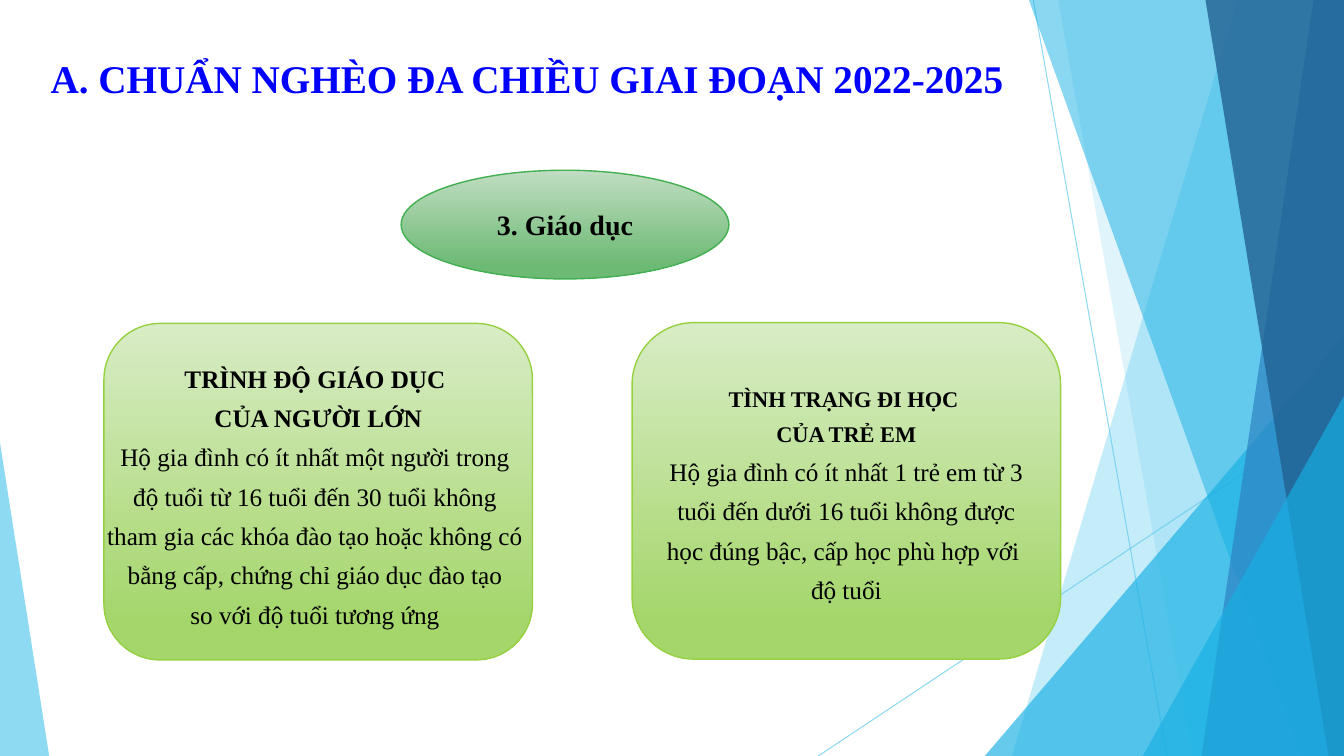
from lxml import etree
from pptx import Presentation
from pptx.dml.color import RGBColor
from pptx.enum.shapes import MSO_CONNECTOR, MSO_SHAPE
from pptx.enum.text import MSO_ANCHOR, PP_ALIGN
from pptx.oxml.ns import qn
from pptx.util import Cm, Pt

STRAIGHT = MSO_CONNECTOR.STRAIGHT
TRIANGLE, OVAL = MSO_SHAPE.ISOSCELES_TRIANGLE, MSO_SHAPE.OVAL
ROUNDED = MSO_SHAPE.ROUNDED_RECTANGLE
MIDDLE, TOP, CENTER = MSO_ANCHOR.MIDDLE, MSO_ANCHOR.TOP, PP_ALIGN.CENTER

W, H = 33.87, 19.05
FONT = "Times New Roman"
COLORS = {
    "sky": "5FCBEF", "cyan": "17B0E4", "blue": "2E83C3", "navy": "226292",
    "title": "0000FF", "text": "000000",
    "lime_top": "D8ECC5", "lime_end": "A5D66C", "lime_line": "96D141",
    "green_top": "C0DDC2", "green_end": "6DBA74", "green_line": "42B051",
}

# Content: (text, size, bold) per paragraph
TITLE = [("A. CHUẨN NGHÈO ĐA CHIỀU GIAI ĐOẠN 2022-2025", 28, True)]
TOPIC = [("3. Giáo dục", 20, True)]
ADULTS = [
    ("TRÌNH ĐỘ GIÁO DỤC ", 18, True),
    ("CỦA NGƯỜI LỚN", 18, True),
    ("Hộ gia đình có ít nhất một người trong ", 18, False),
    ("độ tuổi từ 16 tuổi đến 30 tuổi không ", 18, False),
    ("tham gia các khóa đào tạo hoặc không có ", 18, False),
    ("bằng cấp, chứng chỉ giáo dục đào tạo ", 18, False),
    ("so với độ tuổi tương ứng ", 18, False),
]
CHILDREN = [
    ("TÌNH TRẠNG ĐI HỌC ", 16, True),
    ("CỦA TRẺ EM", 16, True),
    ("Hộ gia đình có ít nhất 1 trẻ em từ 3", 18, False),
    (" tuổi đến dưới 16 tuổi không được ", 18, False),
    ("học đúng bậc, cấp học phù hợp với ", 18, False),
    ("độ tuổi", 18, False),
]
# Cards: left, top, corner, paragraphs
CARD_W, CARD_H = 10.8, 8.48
CARDS = [(2.62, 8.15, 0.167, ADULTS), (15.93, 8.13, 0.184, CHILDREN)]

# Decoration, back to front
RAYS = [(26.04, 0, 29.41, H), (W, 10.24, 20.62, H)]
# band: x at top, x at bottom, out to the right edge
# triangle: left, top, width, apex, down to the bottom edge
PANES = [
    ("band", (31.19, 25.5), "sky", 36),
    ("band", (26.67, 30.05), "sky", 20),
    ("triangle", (24.82, 8.46, 9.05, 1), "cyan", 66),
    ("band", (25.93, 32.79), "cyan", 50),
    ("band", (33.1, 30.28), "blue", 70),
    ("band", (30.38, 33.48), "navy", 80),
    ("triangle", (28.8, 9.98, 5.07, 1), "cyan", 66),
    ("triangle", (0, 11.15, 1.24, 0), "sky", 70),
]


def rgb(name):
    return RGBColor.from_string(COLORS[name])


def set_alpha(s, percent):
    clr = next(s._element.spPr.iter(qn("a:srgbClr")))
    etree.SubElement(clr, qn("a:alpha")).set("val", str(percent * 1000))


def write(s, paragraphs, color, spacing=None, **frame):
    tf = s.text_frame
    for name, value in frame.items():
        setattr(tf, name, value)
    for i, (text, size, bold) in enumerate(paragraphs):
        p = tf.paragraphs[0] if i == 0 else tf.add_paragraph()
        p.alignment, p.line_spacing = CENTER, spacing
        r = p.add_run()
        r.text = text
        for name, value in {"name": FONT, "size": Pt(size), "bold": bold}.items():
            setattr(r.font, name, value)
        r.font.color.rgb = rgb(color)


def add_gradient_shape(kind, box, hue):
    s = shapes.add_shape(kind, *map(Cm, box))
    s.shadow.inherit = False
    s.fill.gradient()
    s.fill.gradient_angle = 270
    for stop, pos, part in zip(s.fill.gradient_stops, (0, 0.88), ("top", "end")):
        stop.position = pos
        stop.color.rgb = rgb(f"{hue}_{part}")
    s.line.color.rgb = rgb(f"{hue}_line")
    s.line.width = Pt(1)
    return s


prs = Presentation()
prs.slide_width, prs.slide_height = Cm(W), Cm(H)
shapes = prs.slides.add_slide(prs.slide_layouts[6]).shapes

# Thin rays
for ray in RAYS:
    s = shapes.add_connector(STRAIGHT, *map(Cm, ray))
    s.line.color.rgb = rgb("sky")
    s.line.width = Pt(0.75)
    set_alpha(s, 70)
    etree.SubElement(s._element.spPr, qn("a:effectLst"))

# Translucent panes
for kind, geometry, color, alpha in PANES:
    if kind == "band":
        x_top, x_bottom = geometry
        corners = [(x_top, 0), (W, 0), (W, H), (x_bottom, H)]
        points = [(Cm(x), Cm(y)) for x, y in corners]
        builder = shapes.build_freeform(*points[0])
        builder.add_line_segments(points[1:])
        s = builder.convert_to_shape()
    else:
        left, top, width, apex = geometry
        s = shapes.add_shape(TRIANGLE, *map(Cm, (left, top, width, H - top)))
        s.adjustments[0] = apex
    s.shadow.inherit = False
    s.fill.solid()
    s.fill.fore_color.rgb = rgb(color)
    set_alpha(s, alpha)
    s.line.fill.background()

# Cards
for left, top, corner, paragraphs in CARDS:
    s = add_gradient_shape(ROUNDED, (left, top, CARD_W, CARD_H), "lime")
    s.adjustments[0] = corner
    write(s, paragraphs, "text", 1.3, word_wrap=False, vertical_anchor=MIDDLE)

# Topic
s = add_gradient_shape(OVAL, (10.11, 4.29, 8.26, 2.74), "green")
write(s, TOPIC, "text", word_wrap=True, vertical_anchor=MIDDLE)

# Title
s = shapes.add_textbox(*map(Cm, (0.79, 1.24, 24.97, 2.34)))
write(s, TITLE, "title", word_wrap=True, vertical_anchor=TOP)

prs.save("out.pptx")
